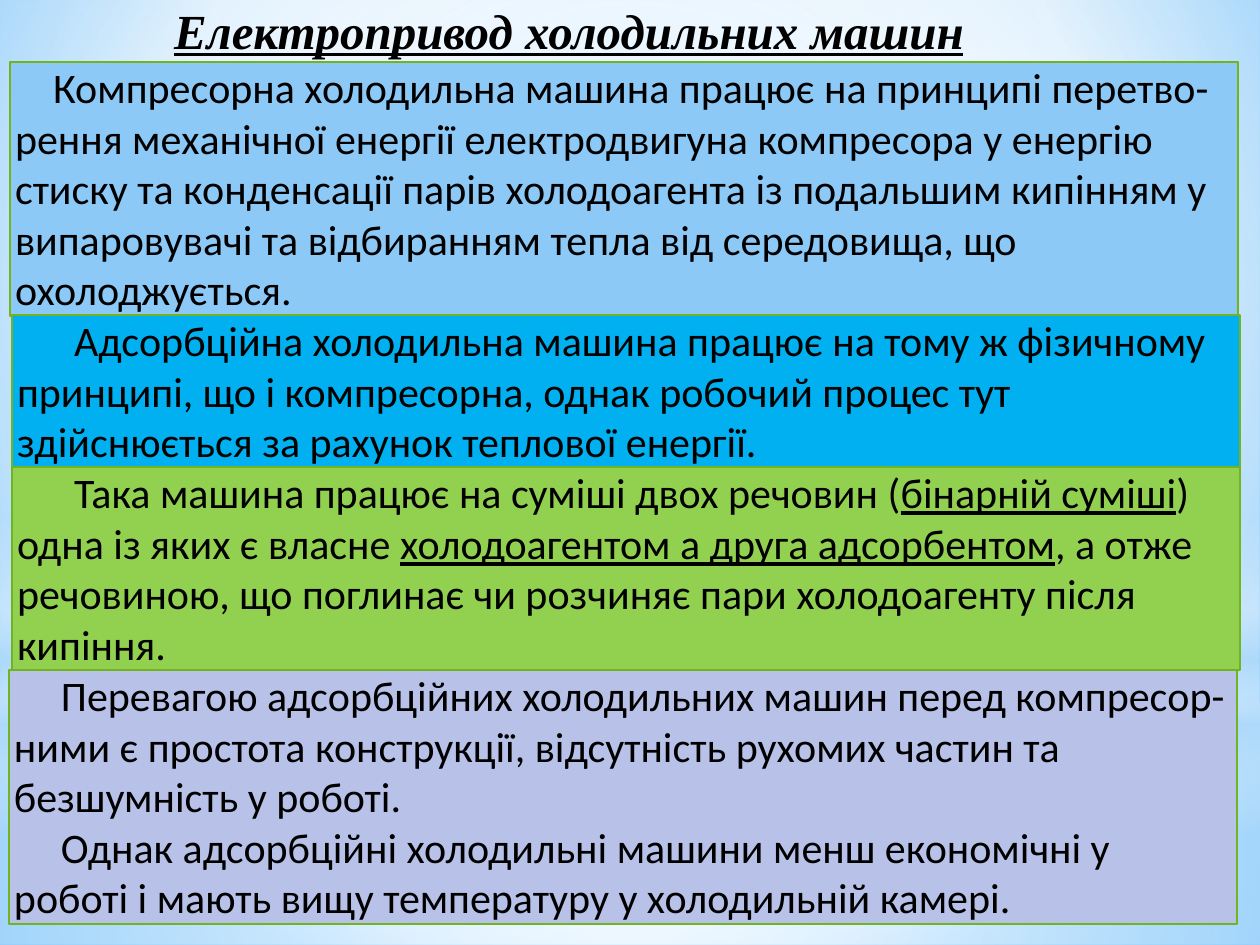
from lxml import etree
from pptx import Presentation, util as u
from pptx.dml.color import RGBColor
from pptx.enum import shapes, text
from pptx.oxml.ns import qn

PX = 914400 / 126
LINE_HEIGHT = 50.8  # px, one line of body text

COLORS = {
    "white": "FFFFFF", "haze": "B4DCFA", "sky": "9ED5FF", "deep": "5BB9FF",
    "text": "000000", "border": "72B41D",
    "light blue": "8CC9F7", "blue": "00B0F0", "green": "92D050", "lilac": "B8C2E9",
}

# Gradient stops: position %, colour, opacity %; focus: left, top, right, bottom %
CENTER = (50, 50, 50, 50)
BACKGROUND = ([(0, "sky", 100), (60, "white", 100), (100, "deep", 100)], (20, 10, 20, 60))
# Glow layers: shape, box, stops, focus (None means a vertical gradient)
GLOWS = [
    ("RECTANGLE", (0, 703, 1260, 242),
     [(0, "white", 91), (37, "white", 76), (100, "haze", 79)], CENTER),
    ("RECTANGLE", (0, 0, 1260, 703),
     [(0, "white", 89), (48, "white", 62), (100, "haze", 79)], CENTER),
    ("RECTANGLE", (0, 519, 1260, 315),
     [(0, "white", 0), (29, "white", 30), (45, "haze", 40),
      (55, "white", 26), (65, "haze", 60), (100, "white", 0)], None),
    ("OVAL", (0, 220, 1260, 703), [(0, "white", 100), (56, "white", 0)], CENTER),
]

TITLE = "Електропривод холодильних машин"
TITLE_BOX = (174, 0, 799, 59)

# Panels: left, top, lines, fill, first-line indent, paragraphs of (text, underlined) runs
PANEL_WIDTH = 1228
PANELS = [
    (10, 62, 5, "light blue", 38, [[(
        "Компресорна холодильна машина працює на принципі перетво-рення механічної "
        "енергії електродвигуна компресора у енергію стиску та конденсації парів "
        "холодоагента із подальшим кипінням у випаровувачі та відбиранням тепла від "
        "середовища, що охолоджується.", False)]]),
    (12, 315, 3, "blue", 57, [[(
        "Адсорбційна холодильна машина працює на тому ж фізичному принципі, що і "
        "компресорна, однак робочий процес тут здійснюється за рахунок теплової "
        "енергії.", False)]]),
    (12, 467, 4, "green", 57, [[
        ("Така машина працює на суміші двох речовин (", False),
        ("бінарній суміші", True),
        (") одна із яких є власне ", False),
        ("холодоагентом а друга адсорбентом", True),
        (", а отже речовиною, що поглинає чи розчиняє пари холодоагенту після "
         "кипіння.", False)]]),
    (9, 670, 5, "lilac", 47, [
        [("Перевагою адсорбційних холодильних машин перед компресор-ними є простота "
          "конструкції, відсутність рухомих частин та безшумність у роботі.", False)],
        [("Однак адсорбційні холодильні машини менш економічні у роботі і мають вищу "
          "температуру у холодильній камері.", False)]]),
]


def px(length):
    return u.Emu(round(length * PX))


def rgb(name):
    return RGBColor.from_string(COLORS[name])


def set_gradient(fill, parent, stops, focus):
    """Fill with a gradient whose stops carry opacity."""
    fill.gradient()
    gradient = parent.find(qn("a:gradFill"))
    for child in list(gradient):
        gradient.remove(child)
    stop_list = etree.SubElement(gradient, qn("a:gsLst"))
    for position, color, opacity in stops:
        stop = etree.SubElement(stop_list, qn("a:gs"), pos=str(position * 1000))
        tone = etree.SubElement(stop, qn("a:srgbClr"), val=COLORS[color])
        if opacity < 100:
            etree.SubElement(tone, qn("a:alpha"), val=str(opacity * 1000))
    if focus:
        circle = etree.SubElement(gradient, qn("a:path"), path="circle")
        sides = {side: str(v * 1000) for side, v in zip("ltrb", focus)}
        etree.SubElement(circle, qn("a:fillToRect"), **sides)
    else:
        etree.SubElement(gradient, qn("a:lin"), ang="5400000", scaled="0")


def set_frame(frame, side_margin, wrap):
    frame.margin_left = frame.margin_right = px(side_margin)
    frame.margin_top = frame.margin_bottom = 0
    frame.vertical_anchor = text.MSO_ANCHOR.TOP
    frame.word_wrap = wrap
    frame.auto_size = text.MSO_AUTO_SIZE.SHAPE_TO_FIT_TEXT


def add_run(paragraph, words, font_name, size, underline, strong=False):
    run = paragraph.add_run()
    run.text = words
    run.font.name = font_name
    run.font.size = u.Pt(size)
    run.font.underline = underline
    run.font.bold = run.font.italic = strong
    run.font.color.rgb = rgb("text")


def add_plain_shape(slide, kind, box):
    shape = slide.shapes.add_shape(kind, *map(px, box))
    shape.shadow.inherit = False
    return shape


def add_panel(slide, left, top, lines, color, indent, paragraphs):
    panel = add_plain_shape(slide, shapes.MSO_SHAPE.RECTANGLE,
                            (left, top, PANEL_WIDTH, round(lines * LINE_HEIGHT)))
    panel.fill.solid()
    panel.fill.fore_color.rgb = rgb(color)
    panel.line.color.rgb = rgb("border")
    panel.line.width = u.Pt(1.25)
    frame = panel.text_frame
    set_frame(frame, 5, True)
    for i, runs in enumerate(paragraphs):
        paragraph = frame.add_paragraph() if i else frame.paragraphs[0]
        paragraph.alignment = text.PP_ALIGN.LEFT
        paragraph._p.get_or_add_pPr().set("indent", str(px(indent)))
        for words, underline in runs:
            add_run(paragraph, words, "Calibri", 24, underline)


def main():
    deck = Presentation()
    deck.slide_width, deck.slide_height = px(1260), px(945)
    slide = deck.slides.add_slide(deck.slide_layouts[6])

    # Background and glow layers
    backdrop = slide.background.fill
    backdrop.solid()
    set_gradient(backdrop, slide.element.find(".//" + qn("p:bgPr")), *BACKGROUND)
    for kind, box, stops, focus in GLOWS:
        glow = add_plain_shape(slide, shapes.MSO_SHAPE[kind], box)
        glow.line.fill.background()
        set_gradient(glow.fill, glow.element.spPr, stops, focus)

    # Title over the first panel
    first, *others = PANELS
    add_panel(slide, *first)
    title = slide.shapes.add_textbox(*map(px, TITLE_BOX)).text_frame
    set_frame(title, 0, False)
    add_run(title.paragraphs[0], TITLE, "Times New Roman", 28, True, strong=True)

    # Remaining panels
    for panel in others:
        add_panel(slide, *panel)

    deck.save("out.pptx")


if __name__ == "__main__":
    main()
